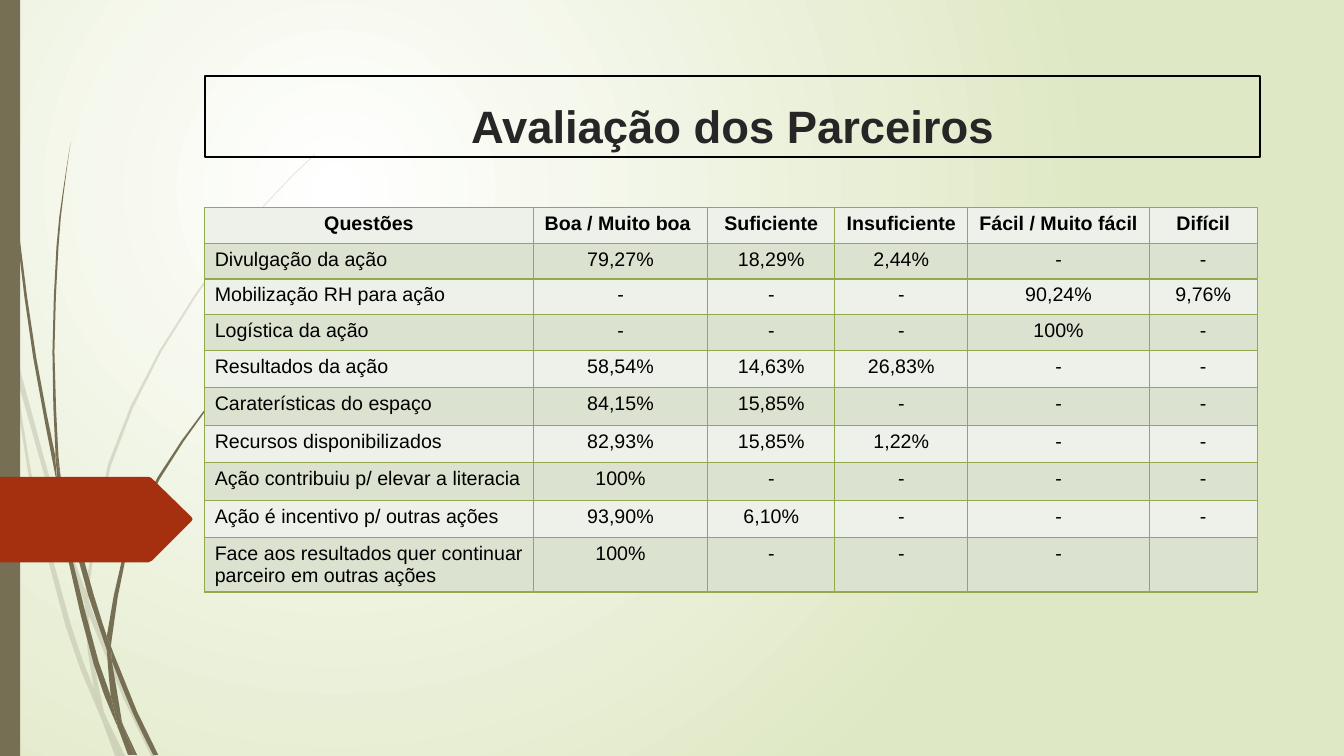
from itertools import pairwise

from pptx import Presentation, oxml
from pptx import util as u
from pptx.dml.color import RGBColor
from pptx.enum import shapes, text
from pptx.oxml import ns

PX = 9144  # EMU in one px, a hundredth of an inch
FONT = "Arial"
BLACK = RGBColor(0x00, 0x00, 0x00)
WHITE = RGBColor(0xFF, 0xFF, 0xFF)
CHARCOAL = RGBColor(0x26, 0x26, 0x26)
LIME = RGBColor(0xDF, 0xE8, 0xC4)
EARTH = RGBColor(0x76, 0x6F, 0x54)
RUST = RGBColor(0xA5, 0x30, 0x10)
GREEN = RGBColor(0x92, 0xAA, 0x4C)
BANDS = (RGBColor(0xEE, 0xF1, 0xE9), RGBColor(0xDC, 0xE2, 0xD0))

# Each blade of grass is a list of edges; each edge is a smooth run of points
PALE_BLADES = [
    [[(11, 350), (9, 322), (0, 282)], [(0, 299), (10, 344)]],
    [[(58, 522), (84, 599)], [(85, 586), (62, 520), (14, 345)], [(17, 376)]],
    [[(92, 607), (88, 596)], [(88, 610), (123, 694), (150, 750)],
     [(155, 750), (127, 692)]],
    [[(119, 750), (124, 750)], [(105, 711)]],
    [[(93, 683), (70, 619), (31, 469), (17, 376), (11, 350)],
     [(11, 350), (28, 470), (65, 621), (92, 693), (101, 714)], [(99, 707)]],
    [[(84, 599), (87, 646), (93, 683), (96, 692), (105, 711)],
     [(103, 706), (91, 646), (88, 610), (88, 608)]],
    [[(88, 584), (110, 462), (160, 349), (229, 245), (268, 198),
      (290, 175), (312, 154)],
     [(312, 153), (289, 175), (268, 197), (228, 244), (158, 348),
      (107, 461), (85, 584), (85, 586)], [(88, 596)]],
    [[(101, 714), (114, 750)], [(119, 750)]],
    [[(88, 608), (88, 610)], [(88, 596), (85, 586)], [(84, 599)]],
    [[(96, 692), (93, 683), (99, 707), (101, 714), (119, 750)], [(105, 711)]],
]
DARK_BLADES = [
    [[(7, 110), (17, 233), (33, 355), (56, 477), (57, 481)],
     [(55, 457), (55, 453), (36, 355), (19, 232), (8, 109), (5, 48), (4, 0)],
     [(3, 0), (4, 48)]],
    [[(88, 592), (106, 645)], [(106, 633), (106, 631), (93, 590), (60, 472)],
     [(64, 505)]],
    [[(113, 649), (110, 641)], [(111, 656), (132, 708), (152, 749)],
     [(157, 749), (136, 706)]],
    [[(110, 691), (98, 657), (72, 556), (64, 505), (57, 477)],
     [(57, 477), (68, 557), (93, 659), (111, 708), (117, 722)], [(116, 717)]],
    [[(60, 472), (58, 453), (54, 349), (58, 245), (63, 193), (70, 141)],
     [(70, 141), (62, 193), (56, 245), (52, 349), (55, 449), (60, 472)]],
    [[(133, 749), (136, 749)], [(122, 719)]],
    [[(57, 477), (64, 505)], [(60, 472), (55, 449)], [(55, 453)]],
    [[(111, 633), (125, 552), (158, 476), (205, 406), (231, 374),
      (245, 359), (261, 344)],
     [(260, 344), (245, 358), (231, 373), (204, 405), (156, 474),
      (122, 551), (106, 631)], [(110, 641)]],
    [[(117, 722), (127, 749)], [(131, 749)]],
    [[(106, 645), (110, 691), (116, 706), (122, 719)],
     [(121, 716), (111, 656), (109, 651)]],
    [[(106, 645), (109, 651), (111, 656)], [(110, 641), (106, 631)],
     [(106, 633)]],
    [[(116, 706), (110, 691), (116, 717), (117, 722), (130, 749)],
     [(133, 749), (122, 719)]],
]
ARROW = [[(0, 0), (147, 0)], [(150, 1), (190, 40)], [(191, 42), (190, 44)],
         [(151, 83), (147, 85)], [(0, 85)]]

COLUMNS = (326, 173, 126, 132, 180, 107)
HEADINGS = ("Questões", "Boa / Muito boa ", "Suficiente", "Insuficiente",
            "Fácil / Muito fácil", "Difícil")
ANSWERS = [
    ("Divulgação da ação", "79,27%", "18,29%", "2,44%", "-", "-"),
    ("Mobilização RH para ação", "-", "-", "-", "90,24%", "9,76%"),
    ("Logística da ação", "-", "-", "-", "100%", "-"),
    ("Resultados da ação", "58,54%", "14,63%", "26,83%", "-", "-"),
    ("Caraterísticas do espaço", "84,15%", "15,85%", "-", "-", "-"),
    ("Recursos disponibilizados", "82,93%", "15,85%", "1,22%", "-", "-"),
    ("Ação contribuiu p/ elevar a literacia", "100%", "-", "-", "-", "-"),
    ("Ação é incentivo p/ outras ações", "93,90%", "6,10%", "-", "-", "-"),
    ("Face aos resultados quer continuar parceiro em outras ações",
     "100%", "-", "-", "-", ""),
]


def smooth(edge):
    """The points of an edge, with a Catmull-Rom midpoint on each long span."""
    if len(edge) < 3:
        return edge
    first = tuple(2 * a - b for a, b in zip(edge[0], edge[1]))
    last = tuple(2 * a - b for a, b in zip(edge[-1], edge[-2]))
    knots = [first, *edge, last]
    curve = [edge[0]]
    for i, (start, end) in enumerate(pairwise(edge)):
        if abs(end[1] - start[1]) > 40:
            curve.append(tuple(
                (9 * (b + c) - a - d) / 16
                for a, b, c, d in zip(knots[i], start, end, knots[i + 3])))
        curve.append(end)
    return curve


def paint(shape, color, opacity=100):
    shape.shadow.inherit = False
    shape.fill.solid()
    shape.fill.fore_color.rgb = color
    shape.line.fill.background()
    if opacity < 100:
        tint = shape.element.spPr.find(".//" + ns.qn("a:srgbClr"))
        tint.append(oxml.parse_xml(
            f'<a:alpha {ns.nsdecls("a")} val="{opacity * 1000}"/>'))


def add_outline(parent, left, top, edges, color, opacity=100):
    points = [((left + x) * PX, (top + y) * PX)
              for edge in edges for x, y in smooth(edge)]
    outline = parent.shapes.build_freeform(*points[0])
    outline.add_line_segments(points[1:], close=True)
    shape = outline.convert_to_shape()
    paint(shape, color, opacity)
    return shape


def add_background(page):
    fill = page.background.fill
    fill.gradient()
    for stop, position, color in zip(fill.gradient_stops, (0, 1), (WHITE, LIME)):
        stop.position = position
        stop.color.rgb = color
    linear = page.element.find(".//" + ns.qn("a:lin"))
    linear.getparent().replace(linear, oxml.parse_xml(
        f'<a:path {ns.nsdecls("a")} path="circle"><a:fillToRect '
        'l="50000" t="50000" r="100000" b="100000"/></a:path>'))


def add_side_decoration(page, left, top, height):
    parts = []
    for blades, opacity in ((PALE_BLADES, 20), (DARK_BLADES, 100)):
        grass = page.shapes.add_group_shape()
        for blade in blades:
            add_outline(grass, left, top, blade, EARTH, opacity)
        parts.append(grass)
    bar = page.shapes.add_shape(shapes.MSO_SHAPE.RECTANGLE, left * PX, top * PX,
                                20 * PX, height * PX)
    paint(bar, EARTH)
    parts += [bar, add_outline(page, left, top + 473, ARROW, RUST)]
    # The decoration belongs to the layout, behind its placeholders
    tree = page.slide_layout.element.cSld.spTree
    for place, part in enumerate(parts, start=2):
        for label in part.element.iter(ns.qn("p:cNvPr")):
            label.set("id", str(int(label.get("id")) + 100))
        tree.insert(place, part.element)


def write(frame, words, size, color, bold, align):
    para = frame.paragraphs[0]
    para.alignment = align
    span = para.add_run()
    span.text = words
    span.font.name, span.font.size, span.font.bold = FONT, u.Pt(size), bold
    span.font.color.rgb = color
    return para


def add_title(page, left, top, width, height):
    title = page.shapes.title
    title.left, title.top = left * PX, top * PX
    title.width, title.height = width * PX, height * PX
    title.line.color.rgb = BLACK
    title.line.width = u.Pt(1.5)
    frame = title.text_frame
    frame.auto_size = text.MSO_AUTO_SIZE.NONE
    frame.vertical_anchor = text.MSO_ANCHOR.BOTTOM
    para = write(frame, "Avaliação dos Parceiros", 32.4, CHARCOAL, True,
                 text.PP_ALIGN.CENTER)
    para.line_spacing = 1.5


def add_borders(cell):
    for side in "LRTB":
        cell._tc.get_or_add_tcPr().append(oxml.parse_xml(
            f'<a:ln{side} {ns.nsdecls("a")} w="12700"><a:solidFill>'
            f'<a:srgbClr val="{GREEN}"/></a:solidFill></a:ln{side}>'))


def add_results(page, left, top, width, height):
    rows = [HEADINGS, *ANSWERS]
    table = page.shapes.add_table(len(rows), len(COLUMNS), left * PX, top * PX,
                                  width * PX, height * PX).table
    for column, column_width in zip(table.columns, COLUMNS):
        column.width = column_width * PX
    for r, row in enumerate(rows):
        table.rows[r].height = u.Pt(25.5 if r < 4 else 26.8)
        for c, words in enumerate(row):
            cell = table.cell(r, c)
            add_borders(cell)
            cell.fill.solid()
            cell.fill.fore_color.rgb = BANDS[r % 2]
            centred = r == 0 or c > 0
            if words:
                write(cell.text_frame, words, 14, BLACK, r == 0,
                      text.PP_ALIGN.CENTER if centred else text.PP_ALIGN.LEFT)


def main():
    deck = Presentation()
    deck.slide_width, deck.slide_height = 1333 * PX, 750 * PX
    page = deck.slides.add_slide(deck.slide_layouts[0])
    subtitle = page.placeholders[1].element
    subtitle.getparent().remove(subtitle)
    add_background(page)
    add_side_decoration(page, 0, 0, 750)
    add_title(page, 203, 75, 1047, 81)
    add_results(page, 203, 206, sum(COLUMNS), 384)
    deck.save("out.pptx")


if __name__ == "__main__":
    main()
